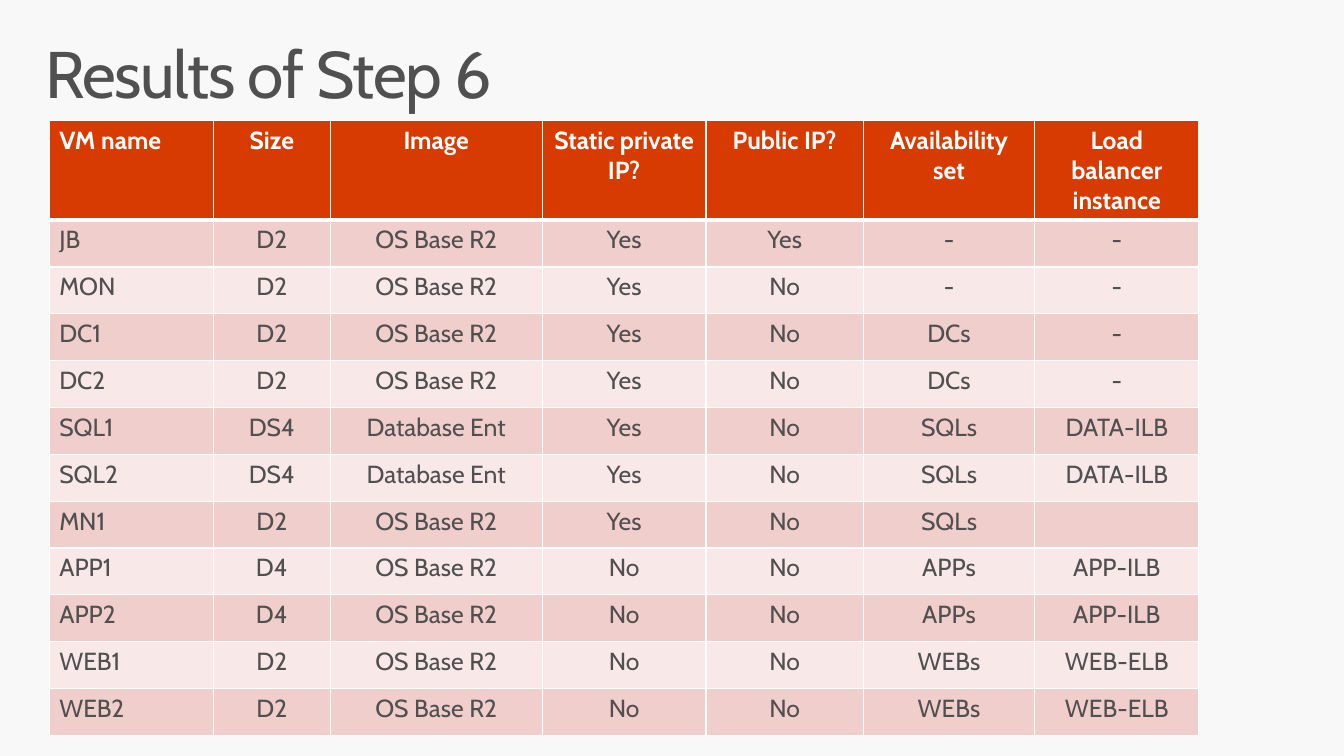
import pptx
import pptx.dml.color
import pptx.enum.text
import pptx.oxml.ns
import pptx.util
from lxml import etree

Pt = pptx.util.Pt
CENTER = pptx.enum.text.PP_ALIGN.CENTER
LEFT = pptx.enum.text.PP_ALIGN.LEFT


def color(hex_string):
    return pptx.dml.color.RGBColor.from_string(hex_string)


def add_run(paragraph, text, size, hex_string, bold=False):
    run = paragraph.add_run()
    run.text = text
    run.font.name = "Cabin"
    run.font.size = Pt(size)
    run.font.bold = bold
    run.font.color.rgb = color(hex_string)
    return run


presentation = pptx.Presentation()
presentation.slide_width = Pt(979.2)
presentation.slide_height = Pt(550.8)
slide = presentation.slides.add_slide(presentation.slide_layouts[6])
slide.background.fill.solid()
slide.background.fill.fore_color.rgb = color("F8F8F8")

# Title
title = slide.shapes.add_textbox(Pt(21.6), Pt(23), Pt(936), Pt(72))
title_frame = title.text_frame
title_frame.word_wrap = True
title_frame.margin_left = title_frame.margin_right = Pt(11.5)
title_frame.margin_top = title_frame.margin_bottom = Pt(7.2)
title_paragraph = title_frame.paragraphs[0]
title_paragraph.line_spacing = 0.9
title_run = add_run(title_paragraph, "Results of Step 6", 48, "505050")
title_run.font._element.set("spc", "-100")

# Table content
header = ["VM name", "Size", "Image", "Static private IP?", "Public IP?",
          "Availability set", "Load balancer instance"]
server_image, database_image = "OS Base R2", "Database Ent"
machines = [
    ["JB", "D2", server_image, "Yes", "Yes", "-", "-"],
    ["MON", "D2", server_image, "Yes", "No", "-", "-"],
    ["DC1", "D2", server_image, "Yes", "No", "DCs", "-"],
    ["DC2", "D2", server_image, "Yes", "No", "DCs", "-"],
    ["SQL1", "DS4", database_image, "Yes", "No", "SQLs", "DATA-ILB"],
    ["SQL2", "DS4", database_image, "Yes", "No", "SQLs", "DATA-ILB"],
    ["MN1", "D2", server_image, "Yes", "No", "SQLs", ""],
    ["APP1", "D4", server_image, "No", "No", "APPs", "APP-ILB"],
    ["APP2", "D4", server_image, "No", "No", "APPs", "APP-ILB"],
    ["WEB1", "D2", server_image, "No", "No", "WEBs", "WEB-ELB"],
    ["WEB2", "D2", server_image, "No", "No", "WEBs", "WEB-ELB"],
]
rows = [header] + machines
column_widths = [119.5, 85.2, 154.3, 119.5, 114.5, 125, 119.5]
row_heights = [72.6] + [34.15] * len(machines)

# Table grid
table = slide.shapes.add_table(
    len(rows), len(header), Pt(36), Pt(87.8),
    Pt(sum(column_widths)), Pt(sum(row_heights))).table
for column, width in zip(table.columns, column_widths):
    column.width = Pt(width)
for row, height in zip(table.rows, row_heights):
    row.height = Pt(height)

# Cells: white borders, thicker under the header, then banded fills and text
for row_index, values in enumerate(rows):
    is_header = row_index == 0
    if is_header:
        fill_color, text_color = "D83B01", "FFFFFF"
    else:
        fill_color = "F0CECC" if row_index % 2 else "F8E8E7"
        text_color = "505050"
    border_widths = {"L": 1, "R": 1,
                     "T": 3 if row_index == 1 else 1,
                     "B": 3 if is_header else 1}
    for column_index, value in enumerate(values):
        cell = table.cell(row_index, column_index)
        properties = cell._tc.get_or_add_tcPr()
        for side, width in border_widths.items():
            line = etree.SubElement(properties, pptx.oxml.ns.qn("a:ln" + side),
                                    w=str(Pt(width)))
            line_fill = etree.SubElement(line, pptx.oxml.ns.qn("a:solidFill"))
            etree.SubElement(line_fill, pptx.oxml.ns.qn("a:srgbClr"), val="FFFFFF")
        cell.fill.solid()
        cell.fill.fore_color.rgb = color(fill_color)
        if value:
            paragraph = cell.text_frame.paragraphs[0]
            paragraph.alignment = CENTER if column_index else LEFT
            add_run(paragraph, value, 18, text_color, is_header)

presentation.save("out.pptx")
